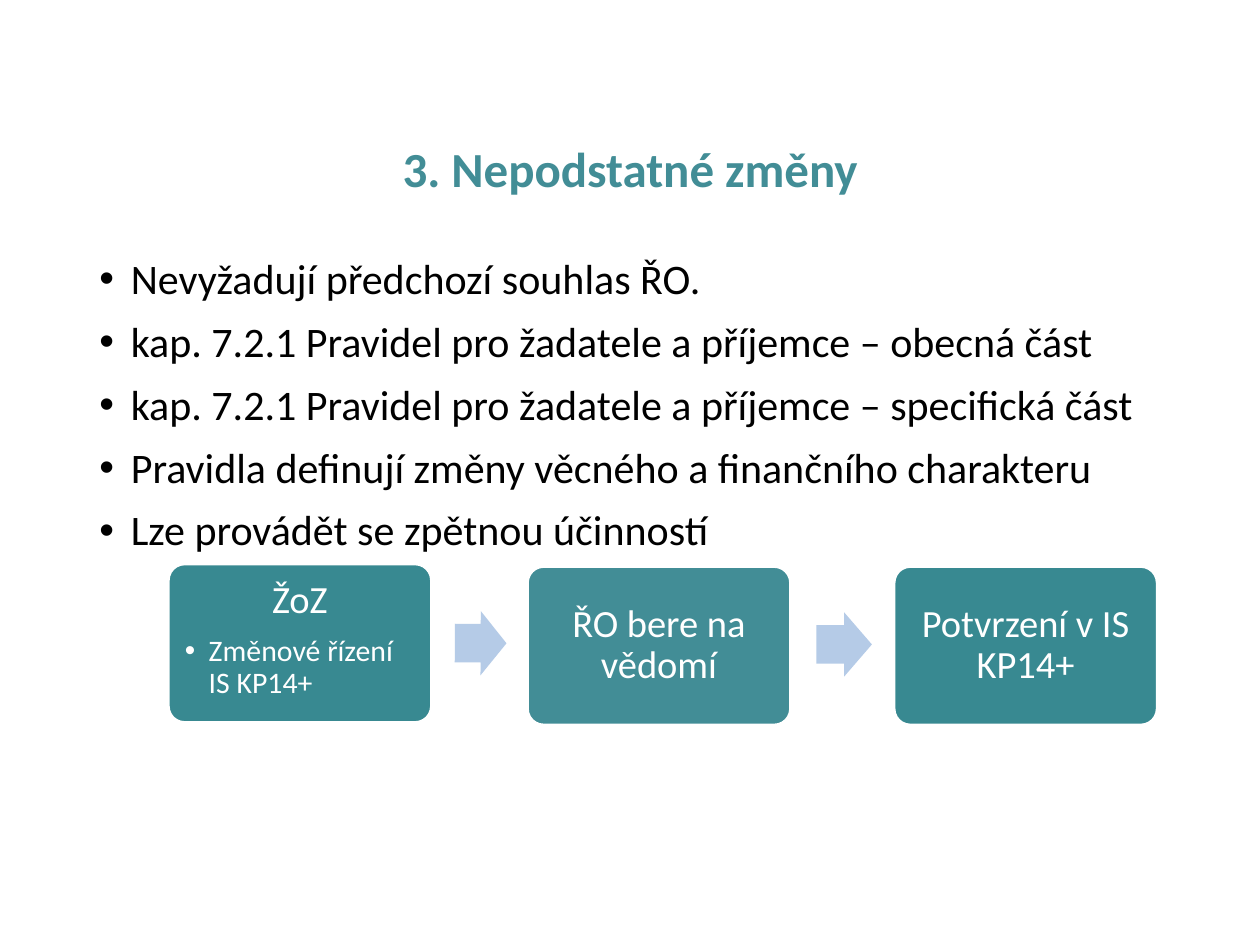
from dataclasses import dataclass

from lxml import etree
from pptx import Presentation
from pptx.dml.color import RGBColor
from pptx.enum.shapes import MSO_SHAPE as Shape
from pptx.enum.text import MSO_ANCHOR as Anchor, PP_ALIGN as Align
from pptx.oxml.ns import qn
from pptx.util import Inches, Pt


@dataclass(frozen=True)
class Theme:
    font: str = "Calibri"
    teal: str = "428D96"
    dark_teal: str = "388991"
    arrow: str = "B5CBE7"
    white: str = "FFFFFF"
    black: str = "000000"
    title_size: int = 28
    body_size: int = 24
    step_size: int = 22
    detail_size: int = 17


theme = Theme()


def add_text(frame, text, size, color, bold=False, align=Align.LEFT,
             before=0, after=0, bullet_indent=None):
    """Add one paragraph, using the empty first one when it is free."""
    first = frame.paragraphs[0]
    paragraph = frame.add_paragraph() if first.runs else first
    paragraph.alignment = align
    paragraph.line_spacing = 0.9
    paragraph.space_before = Pt(before)
    paragraph.space_after = Pt(after)
    if bullet_indent:
        properties = paragraph._p.get_or_add_pPr()
        properties.set("marL", str(Inches(bullet_indent)))
        properties.set("indent", str(-Inches(bullet_indent)))
        etree.SubElement(properties, qn("a:buFont")).set("typeface", "Arial")
        etree.SubElement(properties, qn("a:buChar")).set("char", "•")
    run = paragraph.add_run()
    run.text = text
    run.font.name = theme.font
    run.font.size = Pt(size)
    run.font.bold = bold
    run.font.color.rgb = RGBColor.from_string(color)


def add_filled_shape(kind, left, top, width, height, fill, adjustments):
    shape = slide.shapes.add_shape(
        kind, Inches(left), Inches(top), Inches(width), Inches(height))
    shape.shadow.inherit = False
    shape.fill.solid()
    shape.fill.fore_color.rgb = RGBColor.from_string(fill)
    shape.line.fill.background()
    for index, value in enumerate(adjustments):
        shape.adjustments[index] = value
    return shape


presentation = Presentation()
presentation.slide_width = Inches(10)
presentation.slide_height = Inches(7.5)
slide = presentation.slides.add_slide(presentation.slide_layouts[6])

# Title
title = slide.shapes.add_textbox(
    Inches(0.69), Inches(0.87), Inches(8.62), Inches(0.98)).text_frame
title.word_wrap = True
title.vertical_anchor = Anchor.MIDDLE
add_text(title, "3. Nepodstatné změny", theme.title_size, theme.teal,
         bold=True, align=Align.CENTER)

# Bullet list
body = slide.shapes.add_textbox(
    Inches(0.69), Inches(2), Inches(8.62), Inches(4.38)).text_frame
body.word_wrap = True
bullets = [
    "Nevyžadují předchozí souhlas ŘO.",
    "kap. 7.2.1 Pravidel pro žadatele a příjemce – obecná část",
    "kap. 7.2.1 Pravidel pro žadatele a příjemce – specifická část",
    "Pravidla definují změny věcného a finančního charakteru",
    "Lze provádět se zpětnou účinností",
]
for index, bullet in enumerate(bullets):
    add_text(body, bullet, theme.body_size, theme.black, align=Align.JUSTIFY,
             before=10 if index else 0, bullet_indent=0.25)

# Process steps: left, top, fill, heading, detail
steps = [
    (1.34, 4.48, theme.dark_teal, "ŽoZ", "Změnové řízení IS KP14+"),
    (4.19, 4.5, theme.teal, "ŘO bere na vědomí", None),
    (7.1, 4.5, theme.dark_teal, "Potvrzení v IS KP14+", None),
]
for left, top, fill, heading, detail in steps:
    step = add_filled_shape(Shape.ROUNDED_RECTANGLE, left, top, 2.08, 1.25,
                            fill, [0.1])
    step.line.color.rgb = RGBColor.from_string(theme.white)
    step.line.width = Pt(1)
    frame = step.text_frame
    frame.word_wrap = True
    frame.margin_left = frame.margin_right = Inches(0.09)
    frame.margin_top = frame.margin_bottom = Inches(0.09)
    frame.vertical_anchor = Anchor.TOP if detail else Anchor.MIDDLE
    add_text(frame, heading, theme.step_size, theme.white,
             align=Align.CENTER, after=7.7 if detail else 0)
    if detail:
        add_text(frame, detail, theme.detail_size, theme.white,
                 bullet_indent=0.19)

# Arrows between the steps: left, top, width, rotation
for left, top, width, rotation in [(3.61, 4.85, 0.41, 0.3),
                                   (6.48, 4.86, 0.44, 0)]:
    arrow = add_filled_shape(Shape.RIGHT_ARROW, left, top, width, 0.51,
                             theme.arrow, [0.6, 0.5])
    arrow.rotation = rotation

presentation.save("out.pptx")
